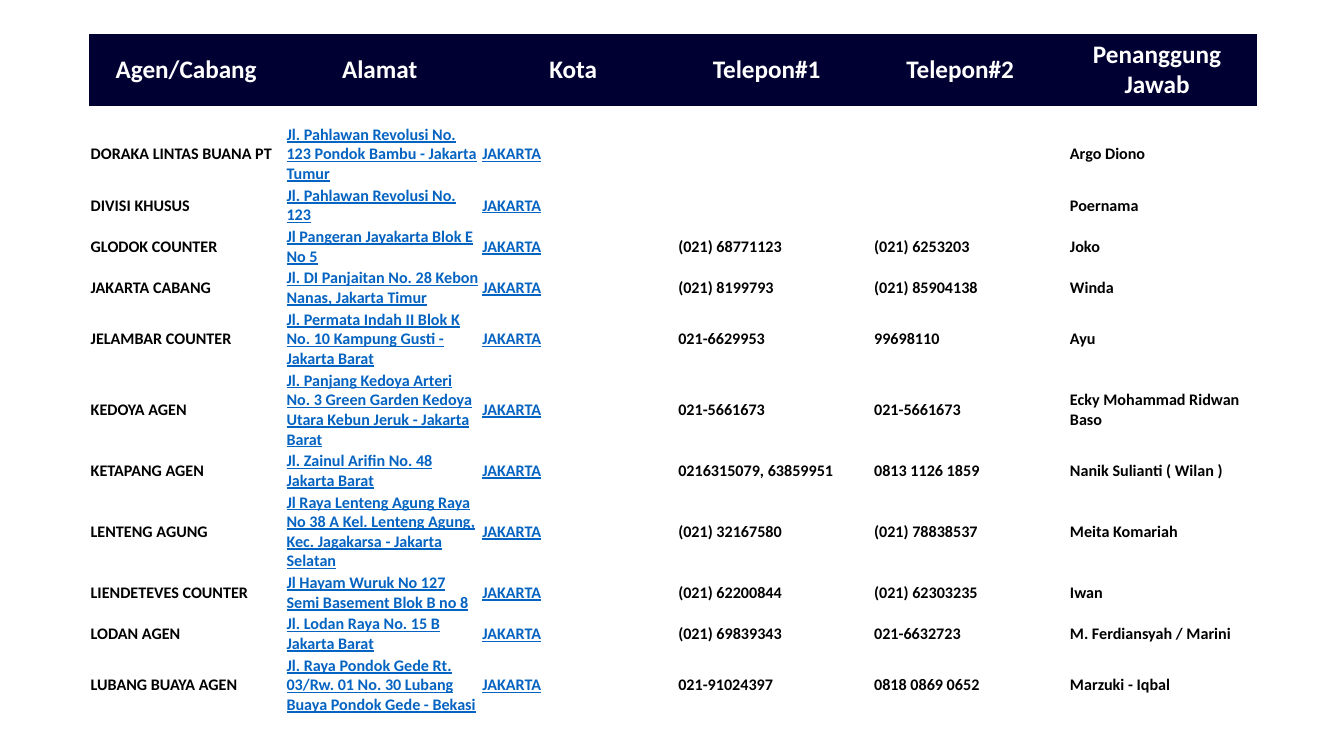
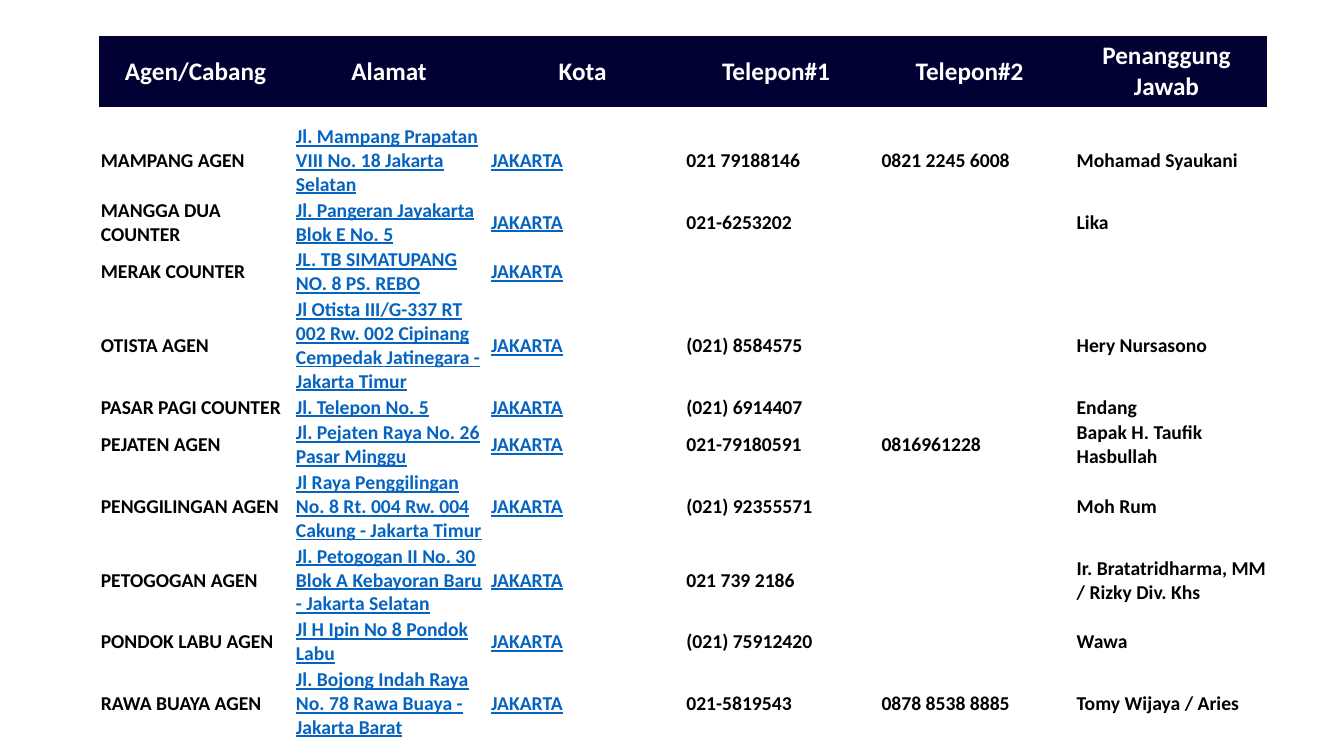
"""Builds the two-slide directory of Jakarta agents and branches."""
from pptx import Presentation
from pptx import util as u
from pptx.dml.color import RGBColor
from pptx.enum import text

NAVY = RGBColor(0x00, 0x00, 0x33)
WHITE = RGBColor(0xFF, 0xFF, 0xFF)
BLACK = RGBColor(0x00, 0x00, 0x00)
LINK_BLUE = RGBColor(0x05, 0x63, 0xC1)
FONT = "Calibri"
PLAIN_TABLE = "{2D5ABB26-0587-4C30-8999-92F81FD0307C}"
CITY = "JAKARTA"
HEADINGS = ("Agen/Cabang", "Alamat", "Kota", "Telepon#1", "Telepon#2", "Penanggung Jawab")
LINK_COLUMNS = (HEADINGS.index("Alamat"), HEADINGS.index("Kota"))
HEADER_WIDTHS = [14.4] * 5 + [14.9]
HEADER_HEIGHT = 9.5
BODY_TOP = 16.4

FIRST_AGENTS = [
    (3, "DORAKA LINTAS BUANA PT", "Jl. Pahlawan Revolusi No. 123 Pondok Bambu - Jakarta Tumur",
     "", "", "Argo Diono"),
    (2, "DIVISI KHUSUS", "Jl. Pahlawan Revolusi No. 123", "", "", "Poernama"),
    (2, "GLODOK COUNTER", "Jl Pangeran Jayakarta Blok E No 5",
     "(021) 68771123", "(021) 6253203", "Joko"),
    (2, "JAKARTA CABANG", "Jl. DI Panjaitan No. 28 Kebon Nanas, Jakarta Timur",
     "(021) 8199793", "(021) 85904138", "Winda"),
    (3, "JELAMBAR COUNTER", "Jl. Permata Indah II Blok K No. 10 Kampung Gusti - Jakarta Barat",
     "021-6629953", "99698110", "Ayu"),
    (4, "KEDOYA AGEN",
     "Jl. Panjang Kedoya Arteri No. 3 Green Garden Kedoya Utara Kebun Jeruk - Jakarta Barat",
     "021-5661673", "021-5661673", "Ecky Mohammad Ridwan Baso"),
    (2, "KETAPANG AGEN", "Jl. Zainul Arifin No. 48 Jakarta Barat",
     "0216315079, 63859951", "0813 1126 1859", "Nanik Sulianti ( Wilan )"),
    (4, "LENTENG AGUNG",
     "Jl Raya Lenteng Agung Raya No 38 A Kel. Lenteng Agung, Kec. Jagakarsa - Jakarta Selatan",
     "(021) 32167580", "(021) 78838537", "Meita Komariah"),
    (2, "LIENDETEVES COUNTER", "Jl Hayam Wuruk No 127 Semi Basement Blok B no 8",
     "(021) 62200844", "(021) 62303235", "Iwan"),
    (2, "LODAN AGEN", "Jl. Lodan Raya No. 15 B Jakarta Barat",
     "(021) 69839343", "021-6632723", "M. Ferdiansyah / Marini"),
    (3, "LUBANG BUAYA AGEN",
     "Jl. Raya Pondok Gede Rt. 03/Rw. 01 No. 30 Lubang Buaya Pondok Gede - Bekasi",
     "021-91024397", "0818 0869 0652", "Marzuki - Iqbal"),
]

SECOND_AGENTS = [
    (3, "MAMPANG AGEN", "Jl. Mampang Prapatan VIII No. 18 Jakarta Selatan",
     "021 79188146", "0821 2245 6008", "Mohamad Syaukani"),
    (2, "MANGGA DUA COUNTER", "Jl. Pangeran Jayakarta Blok E No. 5", "021-6253202", "", "Lika"),
    (2, "MERAK COUNTER", "JL. TB SIMATUPANG NO. 8 PS. REBO", "", "", ""),
    (4, "OTISTA AGEN",
     "Jl Otista III/G-337 RT 002 Rw. 002 Cipinang Cempedak Jatinegara - Jakarta Timur",
     "(021) 8584575", "", "Hery Nursasono"),
    (1, "PASAR PAGI COUNTER", "Jl. Telepon No. 5", "(021) 6914407", "", "Endang"),
    (2, "PEJATEN AGEN", "Jl. Pejaten Raya No. 26 Pasar Minggu",
     "021-79180591", "0816961228", "Bapak H. Taufik Hasbullah"),
    (3, "PENGGILINGAN AGEN", "Jl Raya Penggilingan No. 8 Rt. 004 Rw. 004 Cakung - Jakarta Timur",
     "(021) 92355571", "", "Moh Rum"),
    (3, "PETOGOGAN AGEN", "Jl. Petogogan II No. 30 Blok A Kebayoran Baru - Jakarta Selatan",
     "021 739 2186", "", "Ir. Bratatridharma, MM / Rizky Div. Khs"),
    (2, "PONDOK LABU AGEN", "Jl H Ipin No 8 Pondok Labu", "(021) 75912420", "", "Wawa"),
    (3, "RAWA BUAYA AGEN", "Jl. Bojong Indah Raya No. 78 Rawa Buaya - Jakarta Barat",
     "021-5819543", "0878 8538 8885", "Tomy Wijaya / Aries"),
]


class Directory:
    """Holds the deck, its style and the current slide; lengths are percentages of the slide."""

    def __init__(self):
        self.deck = Presentation()
        self.deck.slide_width = u.Inches(13.33)
        self.deck.slide_height = u.Inches(7.5)
        self.page = None

    def across(self, percent):
        return round(self.deck.slide_width * percent / 100)

    def down(self, percent):
        return round(self.deck.slide_height * percent / 100)

    def add_page(self):
        self.page = self.deck.slides.add_slide(self.deck.slide_layouts[6])

    def add_grid(self, left, top, widths, heights):
        frame = self.page.shapes.add_table(
            len(heights), len(widths), self.across(left), self.down(top),
            self.across(sum(widths)), sum(heights))
        table = frame.table
        table.first_row = table.horz_banding = False
        table._tbl.tblPr[0].text = PLAIN_TABLE
        for column, width in zip(table.columns, widths):
            column.width = self.across(width)
        for row, height in zip(table.rows, heights):
            row.height = height
        return table

    def fill_cell(self, cell, words, size, color):
        cell.vertical_anchor = text.MSO_ANCHOR.MIDDLE
        para = cell.text_frame.paragraphs[0]
        para.font.name = FONT
        para.font.size = u.Pt(size)
        para.font.bold = True
        para.font.color.rgb = color
        if words:
            para.add_run().text = words
        else:
            para._p.get_or_add_endParaRPr().set("sz", str(round(size * 100)))
        return para

    def header(self, left, top):
        table = self.add_grid(left, top, HEADER_WIDTHS, [self.down(HEADER_HEIGHT)])
        for cell, heading in zip(table.iter_cells(), HEADINGS):
            cell.fill.solid()
            cell.fill.fore_color.rgb = NAVY
            para = self.fill_cell(cell, heading, 18, WHITE)
            para.alignment = text.PP_ALIGN.CENTER

    def body(self, left, width, size, agents):
        heights = [u.Pt(lines * size * 1.2) + u.Inches(0.02) for lines, *_ in agents]
        widths = [width / len(HEADINGS)] * len(HEADINGS)
        table = self.add_grid(left, BODY_TOP, widths, heights)
        for row, (_, name, address, *contacts) in zip(table.rows, agents):
            for index, words in enumerate((name, address, CITY, *contacts)):
                cell = row.cells[index]
                cell.fill.background()
                cell.margin_left = cell.margin_right = u.Inches(0.02)
                cell.margin_top = cell.margin_bottom = u.Inches(0.01)
                linked = index in LINK_COLUMNS
                para = self.fill_cell(cell, words, size, LINK_BLUE if linked else BLACK)
                if linked:
                    para.font.underline = True


def main():
    directory = Directory()
    pages = (
        (6.65, 4.5, 6.6, 87.45, 11.5, FIRST_AGENTS),
        (7.35, 4.7, 7.35, 87.15, 14, SECOND_AGENTS),
    )
    for header_left, header_top, body_left, body_width, size, agents in pages:
        directory.add_page()
        directory.header(header_left, header_top)
        directory.body(body_left, body_width, size, agents)
    directory.deck.save("out.pptx")


if __name__ == "__main__":
    main()
